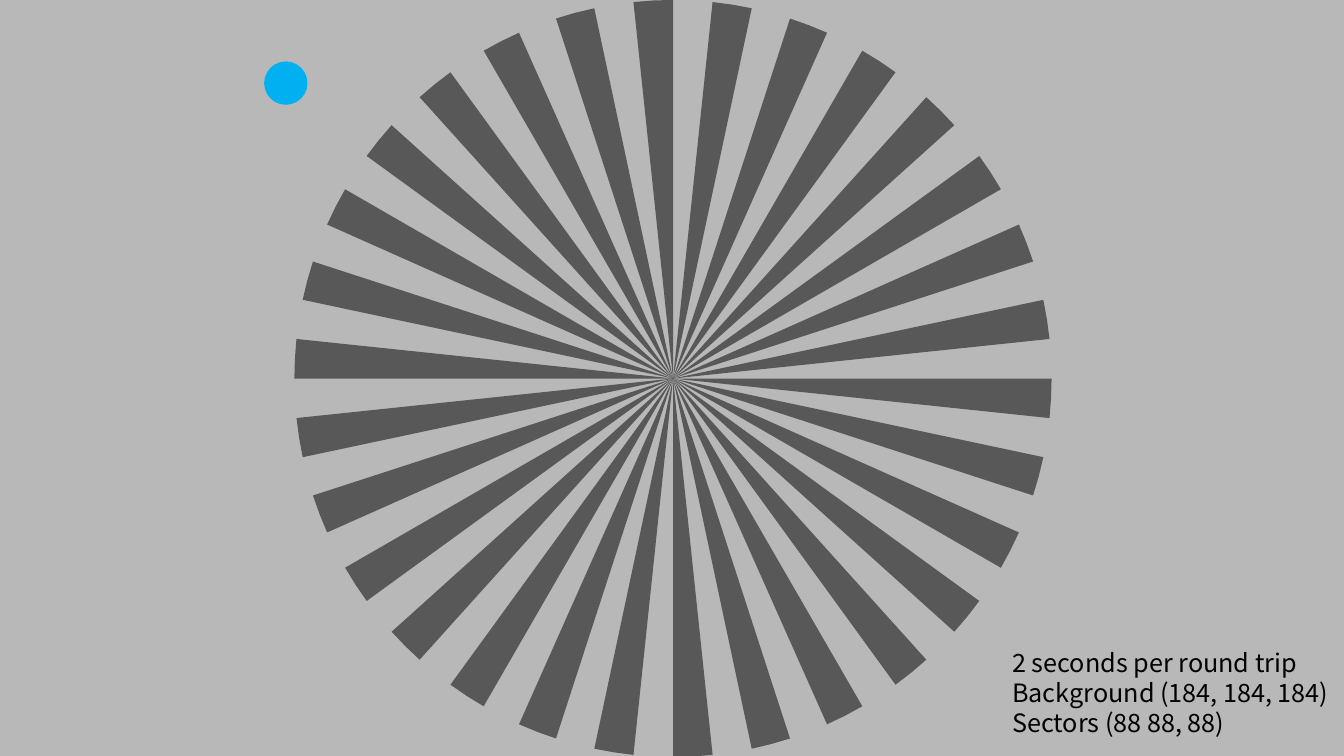
import math

from pptx import Presentation
from pptx.dml.color import RGBColor
from pptx.enum.shapes import MSO_SHAPE
from pptx.enum.text import MSO_AUTO_SIZE
from pptx.util import Inches, Pt

OVAL = MSO_SHAPE.OVAL
FIT_SHAPE = MSO_AUTO_SIZE.SHAPE_TO_FIT_TEXT

BACKGROUND = RGBColor(184, 184, 184)
SECTOR = RGBColor(88, 88, 88)
DOT = RGBColor(0, 176, 240)
BLACK = RGBColor(0, 0, 0)

FONT = "Noto Sans CJK JP"
SECTOR_COUNT = 30
NOTES = [
    "2 seconds per round trip",
    "Background (184, 184, 184)",
    "Sectors (88 88, 88)",
]


def paint(shape, color):
    """Give a shape a flat fill with no outline or shadow."""
    shape.shadow.inherit = False
    shape.fill.solid()
    shape.fill.fore_color.rgb = color
    shape.line.fill.background()


def add_wheel(slide, left, top, diameter):
    """Draw equal sectors with equal gaps, as one group."""
    radius = diameter / 2
    center = (left + radius, top + radius)
    step = 360 / SECTOR_COUNT
    group = slide.shapes.add_group_shape()

    def rim_point(degrees):
        angle = math.radians(degrees)
        return (center[0] + radius * math.cos(angle),
                center[1] + radius * math.sin(angle))

    for index in range(SECTOR_COUNT):
        start = -index * step
        rim = [rim_point(start + step * part / 4) for part in range(3)]
        builder = group.shapes.build_freeform(*center)
        builder.add_line_segments(rim, close=True)
        paint(builder.convert_to_shape(), SECTOR)


def add_dot(slide, left, top, diameter):
    dot = slide.shapes.add_shape(OVAL, left, top, diameter, diameter)
    paint(dot, DOT)


def format_run(run, text, size=18, color=BLACK, font=FONT):
    run.text = text
    run.font.size = Pt(size)
    run.font.name = font
    run.font.color.rgb = color


def add_notes(slide, left, top, width, height):
    frame = slide.shapes.add_textbox(left, top, width, height).text_frame
    frame.word_wrap = False
    frame.auto_size = FIT_SHAPE
    for index, text in enumerate(NOTES):
        paragraph = frame.add_paragraph() if index else frame.paragraphs[0]
        format_run(paragraph.add_run(), text)


def main():
    presentation = Presentation()
    presentation.slide_width = Inches(13.33)
    presentation.slide_height = Inches(7.5)
    slide = presentation.slides.add_slide(presentation.slide_layouts[6])
    slide.background.fill.solid()
    slide.background.fill.fore_color.rgb = BACKGROUND

    # Wheel of sectors
    add_wheel(slide, Inches(2.92), Inches(0), Inches(7.51))
    # Caption, bottom right
    add_notes(slide, Inches(9.94), Inches(6.37), Inches(3.39), Inches(1.01))
    # Moving dot
    add_dot(slide, Inches(2.62), Inches(0.61), Inches(0.43))

    presentation.save("out.pptx")


if __name__ == "__main__":
    main()
